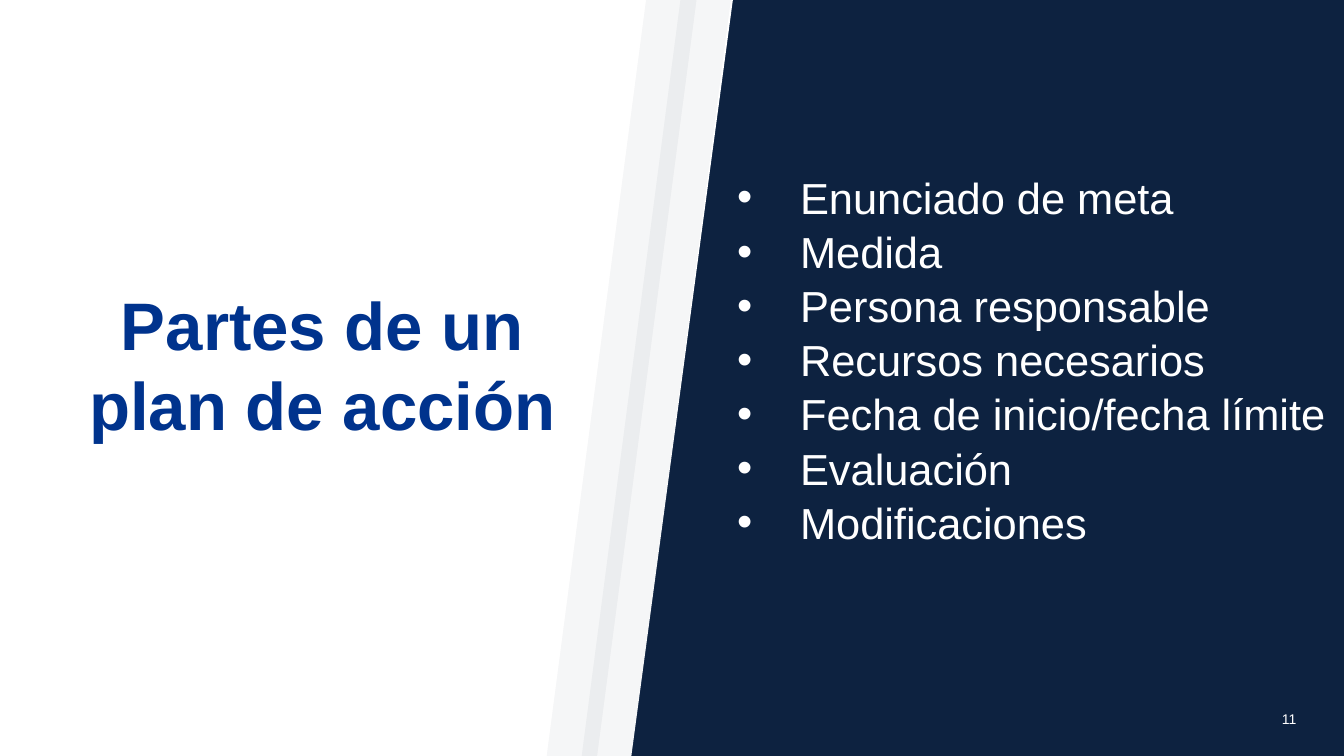
"""Build the slide on the parts of an action plan."""
from dataclasses import dataclass

import pptx
import pptx.dml.color
import pptx.enum.shapes
import pptx.enum.text
import pptx.oxml
import pptx.oxml.ns
import pptx.util

Pt = pptx.util.Pt
ALIGN = pptx.enum.text.PP_ALIGN
ANCHOR = pptx.enum.text.MSO_ANCHOR
WIDTH, HEIGHT = 960, 540
NAVY, WHITE, BLUE = "0D2240", "FFFFFF", "00338D"
PARTS = [
    "Enunciado de meta",
    "Medida",
    "Persona responsable",
    "Recursos necesarios",
    "Fecha de inicio/fecha límite",
    "Evaluación",
    "Modificaciones",
]


@dataclass
class Panel:
    top_left: float
    top_right: float
    bottom_right: float
    bottom_left: float
    color: str
    opacity: int = 100


@dataclass
class TextBlock:
    box: tuple[float, float, float, float]
    lines: list[str]
    size: float
    color: str
    bold: bool = False
    align: ALIGN = ALIGN.LEFT
    anchor: ANCHOR = ANCHOR.TOP
    spacing: float = 1.0
    bullet_indent: float = 0
    inset_x: float = 7.2
    inset_y: float = 3.6


PANELS = [
    Panel(0, 523.5, 451, 0, WHITE),
    Panel(461.5, 497.5, 426.5, 390.5, NAVY, 4),
    Panel(486, 522, 451.5, 415.5, NAVY, 4),
]
TITLE = TextBlock((30, 197.5, 401, 123.5), ["Partes de un plan de acción"], 48, BLUE,
                  bold=True, align=ALIGN.CENTER, anchor=ANCHOR.BOTTOM)
PAGE_NUMBER = TextBlock((908.5, 504, 51.5, 36), ["11"], 10, WHITE)
PART_LIST = TextBlock((519, 120, 438, 272), PARTS, 31, WHITE, anchor=ANCHOR.MIDDLE,
                      spacing=1.04, bullet_indent=45, inset_x=6.5, inset_y=3)


def rgb(color: str) -> pptx.dml.color.RGBColor:
    return pptx.dml.color.RGBColor.from_string(color)


def paint(shape, color: str, opacity: int = 100) -> None:
    shape.shadow.inherit = False
    shape.line.fill.background()
    shape.fill.solid()
    shape.fill.fore_color.rgb = rgb(color)
    if opacity < 100:
        tone = shape.fill._xPr.find(".//" + pptx.oxml.ns.qn("a:srgbClr"))
        alpha = pptx.oxml.parse_xml(f'<a:alpha {pptx.oxml.ns.nsdecls("a")} val="{opacity * 1000}"/>')
        tone.append(alpha)


def draw_panel(slide, panel: Panel) -> None:
    outline = slide.shapes.build_freeform(Pt(panel.top_left), 0)
    outline.add_line_segments([
        (Pt(panel.top_right), 0),
        (Pt(panel.bottom_right), Pt(HEIGHT)),
        (Pt(panel.bottom_left), Pt(HEIGHT)),
    ])
    paint(outline.convert_to_shape(), panel.color, panel.opacity)


def add_bullet(paragraph, indent: float) -> None:
    properties = paragraph._p.get_or_add_pPr()
    properties.set("marL", str(Pt(indent + 1)))
    properties.set("indent", str(-Pt(indent)))
    namespace = pptx.oxml.ns.nsdecls("a")
    properties.append(pptx.oxml.parse_xml(f'<a:buFont {namespace} typeface="Arial"/>'))
    properties.append(pptx.oxml.parse_xml(f'<a:buChar {namespace} char="•"/>'))


def write_text(shape, block: TextBlock) -> None:
    for side, length in zip(("left", "top", "width", "height"), block.box):
        setattr(shape, side, Pt(length))
    frame = shape.text_frame
    frame_format = {
        "word_wrap": True,
        "auto_size": pptx.enum.text.MSO_AUTO_SIZE.NONE,
        "vertical_anchor": block.anchor,
        "margin_left": Pt(block.inset_x),
        "margin_right": Pt(block.inset_x),
        "margin_top": Pt(block.inset_y),
        "margin_bottom": Pt(block.inset_y),
    }
    for name, value in frame_format.items():
        setattr(frame, name, value)
    frame.text = "\n".join(block.lines)
    font_format = {"name": "Arial", "size": Pt(block.size), "bold": block.bold}
    for paragraph in frame.paragraphs:
        paragraph.alignment = block.align
        paragraph.line_spacing = block.spacing
        if block.bullet_indent:
            add_bullet(paragraph, block.bullet_indent)
        for name, value in font_format.items():
            setattr(paragraph.font, name, value)
        paragraph.font.color.rgb = rgb(block.color)


def main() -> None:
    deck = pptx.Presentation()
    deck.slide_width, deck.slide_height = Pt(WIDTH), Pt(HEIGHT)
    slide = deck.slides.add_slide(deck.slide_layouts.get_by_name("Title Only"))
    backdrop = slide.shapes.add_shape(
        pptx.enum.shapes.MSO_SHAPE.RECTANGLE, 0, 0, Pt(WIDTH), Pt(HEIGHT))
    paint(backdrop, NAVY)
    for panel in PANELS:
        draw_panel(slide, panel)
    title = slide.shapes.title
    slide.shapes._spTree.append(title._element)
    write_text(title, TITLE)
    for block in (PAGE_NUMBER, PART_LIST):
        write_text(slide.shapes.add_textbox(0, 0, 0, 0), block)
    deck.save("out.pptx")


if __name__ == "__main__":
    main()
